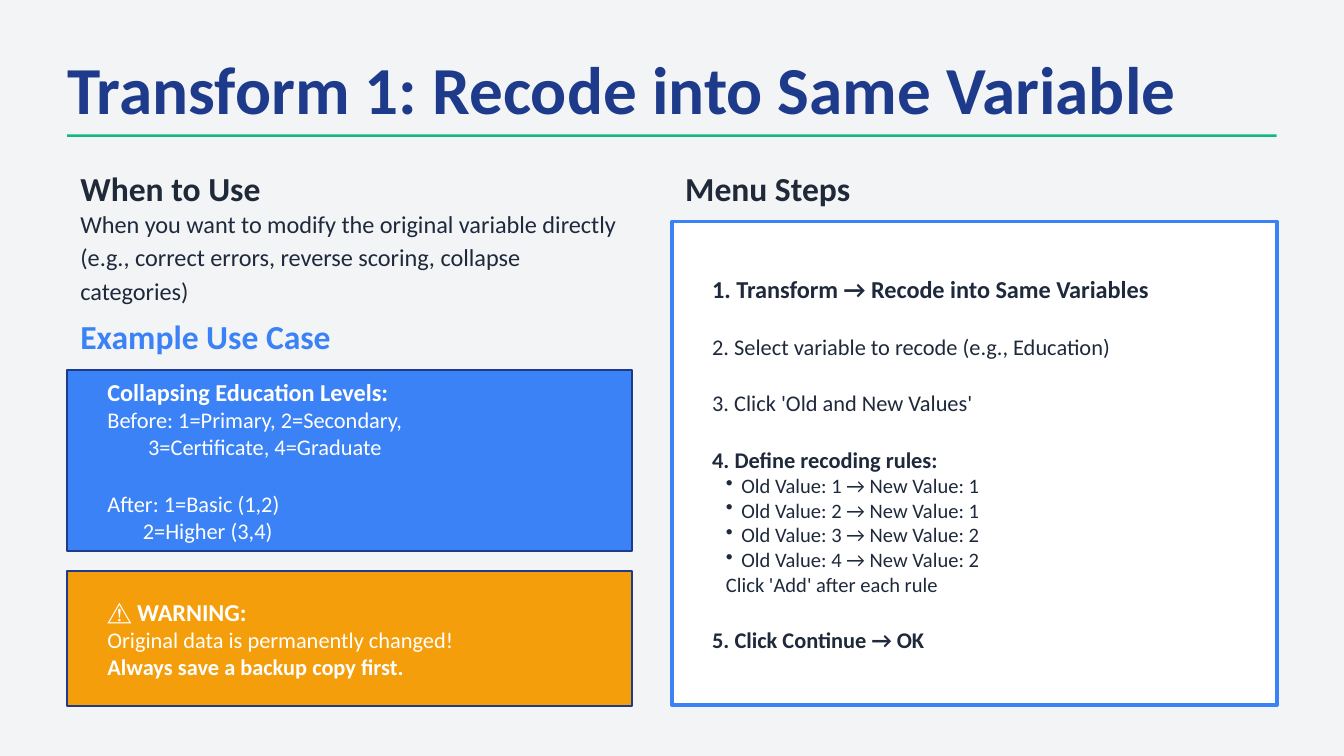
from dataclasses import dataclass

import pptx
import pptx.dml.color
import pptx.enum.shapes
import pptx.enum.text
import pptx.oxml
import pptx.oxml.ns
import pptx.slide
import pptx.util

Cm = pptx.util.Cm
Pt = pptx.util.Pt


@dataclass(frozen=True)
class Theme:
    font: str = "Calibri"
    background: str = "F3F4F6"
    navy: str = "1E3A8A"
    green: str = "10B981"
    heading: str = "1F2937"
    ink: str = "1E293B"
    blue: str = "3B82F6"
    orange: str = "F59E0B"
    white: str = "FFFFFF"
    title_size: int = 36
    heading_size: int = 18
    lead_size: int = 13
    body_size: int = 12
    small_size: int = 11
    line_pitch: int = 18
    gap: int = 16


THEME = Theme()


@dataclass(frozen=True)
class Area:
    left: float
    top: float
    width: float
    height: float

    def inset(self, across: float, down: float) -> "Area":
        return Area(self.left + across, self.top + down,
                    self.width - 2 * across, self.height - 2 * down)


@dataclass(frozen=True)
class Line:
    text: str
    size: int = THEME.body_size
    bold: bool = False
    gap: int = 0
    indent: float = 0
    bullet: bool = False
    pitch: int = 0


@dataclass(frozen=True)
class Heading:
    text: str
    area: Area
    color: str


@dataclass(frozen=True)
class Panel:
    area: Area
    fill: str
    border: str
    border_width: float
    text_color: str
    lines: tuple[Line, ...]


BULLET_HANG = 0.29
PANEL_PAD = (0.51, 0.38)
LEFT, LEFT_WIDTH = 1.27, 10.67
RIGHT, RIGHT_WIDTH = 12.7, 11.43
HEADING_TOP, HEADING_HEIGHT = 3.18, 0.76

HEADINGS = (
    Heading("When to Use", Area(LEFT, HEADING_TOP, LEFT_WIDTH, HEADING_HEIGHT), THEME.heading),
    Heading("Menu Steps", Area(RIGHT, HEADING_TOP, RIGHT_WIDTH, HEADING_HEIGHT), THEME.heading),
    Heading("Example Use Case", Area(LEFT, 5.97, LEFT_WIDTH, HEADING_HEIGHT), THEME.blue),
)

RECODES = ((1, 1), (2, 1), (3, 2), (4, 2))
RULE_LINES = tuple(
    Line(f"Old Value: {old} → New Value: {new}", THEME.small_size,
         indent=0.26 + BULLET_HANG, bullet=True)
    for old, new in RECODES
)

PANELS = (
    Panel(Area(RIGHT, 4.19, RIGHT_WIDTH, 9.14), THEME.white, THEME.blue, 2, THEME.ink, (
        Line("1. Transform → Recode into Same Variables", THEME.lead_size, bold=True),
        Line("2. Select variable to recode (e.g., Education)", gap=THEME.gap),
        Line("3. Click 'Old and New Values'", gap=THEME.gap),
        Line("4. Define recoding rules:", bold=True, gap=THEME.gap),
        *RULE_LINES,
        Line("Click 'Add' after each rule", THEME.small_size, indent=0.26),
        Line("5. Click Continue → OK", bold=True, gap=THEME.gap),
    )),
    Panel(Area(LEFT, 6.99, LEFT_WIDTH, 3.43), THEME.blue, THEME.navy, 1, THEME.white, (
        Line("Collapsing Education Levels:", THEME.lead_size, bold=True),
        Line("Before: 1=Primary, 2=Secondary,"),
        Line("3=Certificate, 4=Graduate", indent=0.77),
        Line("After: 1=Basic (1,2)", gap=THEME.gap),
        Line("2=Higher (3,4)", indent=0.67),
    )),
    Panel(Area(LEFT, 10.8, LEFT_WIDTH, 2.54), THEME.orange, THEME.navy, 1, THEME.white, (
        Line("⚠ WARNING:", THEME.lead_size, bold=True),
        Line("Original data is permanently changed!"),
        Line("Always save a backup copy first.", bold=True),
    )),
)


def rgb(color: str) -> pptx.dml.color.RGBColor:
    return pptx.dml.color.RGBColor.from_string(color)


def place(area: Area) -> tuple[Cm, Cm, Cm, Cm]:
    return Cm(area.left), Cm(area.top), Cm(area.width), Cm(area.height)


def add_text(page: pptx.slide.Slide, area: Area, lines: tuple[Line, ...],
             color: str, margins: bool = True) -> None:
    frame = page.shapes.add_textbox(*place(area)).text_frame
    frame.word_wrap = True
    frame.vertical_anchor = pptx.enum.text.MSO_ANCHOR.MIDDLE
    if not margins:
        frame.margin_left = frame.margin_right = frame.margin_top = frame.margin_bottom = 0
    for index, line in enumerate(lines):
        para = frame.add_paragraph() if index else frame.paragraphs[0]
        para.text = line.text
        if line.indent:
            properties = para._p.get_or_add_pPr()
            properties.set("marL", str(Cm(line.indent)))
            properties.set("indent", str(Cm(-BULLET_HANG) if line.bullet else 0))
            if line.bullet:
                properties.append(pptx.oxml.parse_xml(
                    f'<a:buChar {pptx.oxml.ns.nsdecls("a")} char="•"/>'))
        if line.gap:
            para.space_before = Pt(line.gap)
        if line.pitch:
            para.line_spacing = Pt(line.pitch)
        para.font.name = THEME.font
        para.font.size = Pt(line.size)
        para.font.bold = line.bold
        para.font.color.rgb = rgb(color)


def add_rectangle(page: pptx.slide.Slide, area: Area, fill: str,
                  border: str = "", border_width: float = 0) -> None:
    box = page.shapes.add_shape(pptx.enum.shapes.MSO_SHAPE.RECTANGLE, *place(area))
    box.shadow.inherit = False
    box.fill.solid()
    box.fill.fore_color.rgb = rgb(fill)
    if border:
        box.line.color.rgb = rgb(border)
        box.line.width = Pt(border_width)
    else:
        box.line.fill.background()


def add_panel(page: pptx.slide.Slide, panel: Panel) -> None:
    add_rectangle(page, panel.area, panel.fill, panel.border, panel.border_width)
    add_text(page, panel.area.inset(*PANEL_PAD), panel.lines, panel.text_color)


def main() -> None:
    deck = pptx.Presentation()
    deck.slide_width, deck.slide_height = Cm(25.4), Cm(14.29)
    page = deck.slides.add_slide(deck.slide_layouts[6])
    page.background.fill.solid()
    page.background.fill.fore_color.rgb = rgb(THEME.background)

    title = Line("Transform 1: Recode into Same Variable", THEME.title_size, bold=True)
    add_text(page, Area(LEFT, 1.02, 22.86, 1.27), (title,), THEME.navy, margins=False)
    add_rectangle(page, Area(LEFT, 2.54, 22.86, 0.05), THEME.green)

    for heading in HEADINGS:
        line = Line(heading.text, THEME.heading_size, bold=True)
        add_text(page, heading.area, (line,), heading.color)

    purpose = Line(
        "When you want to modify the original variable directly "
        "(e.g., correct errors, reverse scoring, collapse categories)",
        THEME.lead_size, pitch=THEME.line_pitch)
    add_text(page, Area(LEFT, 4.06, LEFT_WIDTH, 1.52), (purpose,), THEME.ink)

    for panel in PANELS:
        add_panel(page, panel)
    deck.save("out.pptx")


if __name__ == "__main__":
    main()
